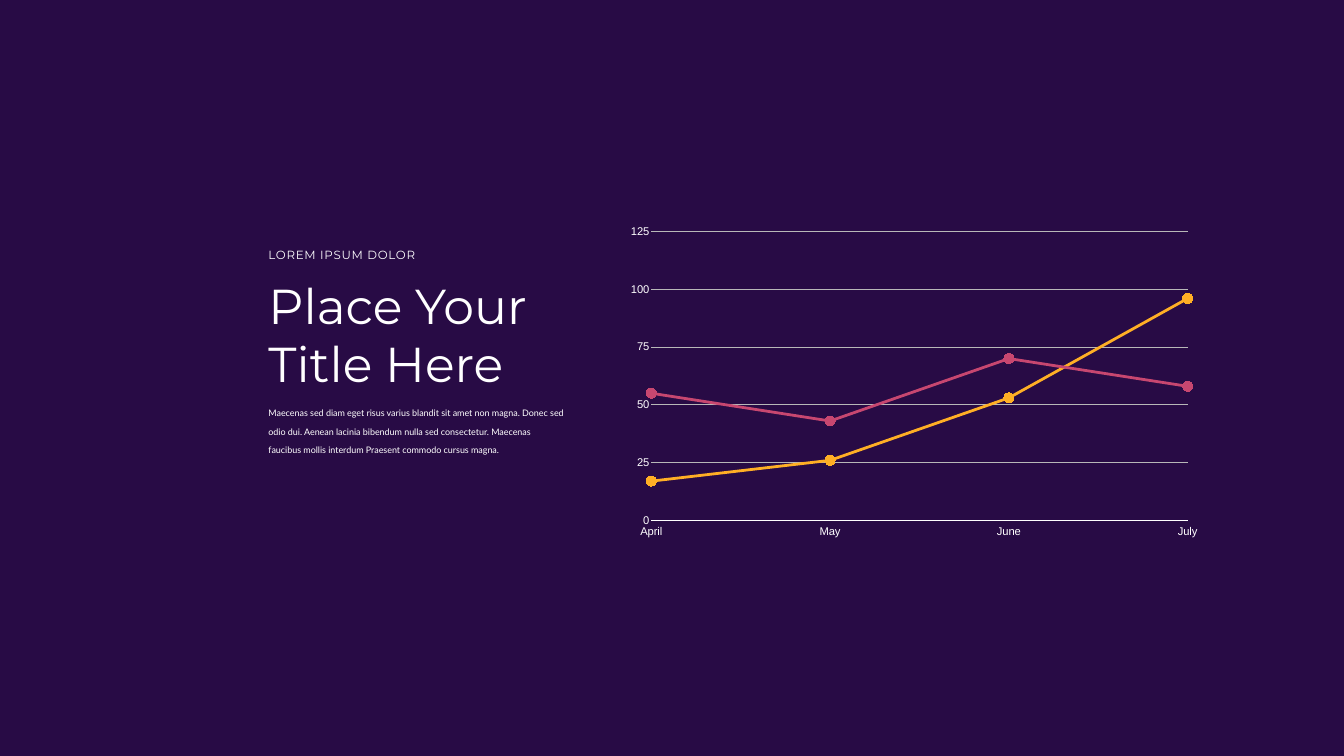
from lxml import etree
from pptx import Presentation
from pptx.chart.data import CategoryChartData
from pptx.dml.color import RGBColor
from pptx.enum.chart import XL_CHART_TYPE, XL_MARKER_STYLE, XL_TICK_LABEL_POSITION, XL_TICK_MARK
from pptx.enum.text import MSO_ANCHOR, MSO_AUTO_SIZE, PP_ALIGN
from pptx.oxml.ns import qn
from pptx.util import Pt

LINE_MARKERS = XL_CHART_TYPE.LINE_MARKERS
CIRCLE = XL_MARKER_STYLE.CIRCLE
LOW = XL_TICK_LABEL_POSITION.LOW
NO_TICK = XL_TICK_MARK.NONE
TOP, MIDDLE = MSO_ANCHOR.TOP, MSO_ANCHOR.MIDDLE
NO_FIT = MSO_AUTO_SIZE.NONE
LEFT = PP_ALIGN.LEFT
TITLE_ONLY = 5

COLORS = {"night": "280B45", "white": "FFFFFF", "grid": "B8B8B8",
          "amber": "FFAF25", "rose": "C74770"}

SLIDE_SIZE = (1920, 1080)
TEXT_LEFT = 379.5
INSET = 4

TITLE = {"text": "Place Your Title Here", "top": 386.5, "width": 508, "height": 181,
         "font": "Montserrat", "size": 70, "anchor": MIDDLE}
TEXTS = [
    {"text": "LOREM IPSUM DOLOR", "top": 349, "width": 472, "height": 29,
     "font": "Montserrat", "size": 16.9, "anchor": MIDDLE, "run": {"spc": "100"}},
    {"text": "Maecenas sed diam eget risus varius blandit sit amet non magna. "
             "Donec sed odio dui. Aenean lacinia bibendum nulla sed consectetur. "
             "Maecenas faucibus mollis interdum Praesent commodo cursus magna.",
     "top": 572.5, "width": 431, "height": 158, "font": "Lato", "size": 22,
     "anchor": TOP, "before": 45, "run": {"baseline": "14000"}},
]

CHART_BOX = (888.5, 313, 823, 461.5)
PLOT = {"x": 0.051, "y": 0.038, "w": 0.931, "h": 0.895}
MONTHS = ["April", "May", "June", "July"]
SERIES = [("Series 1", [17, 26, 53, 96], "amber"),
          ("Series 2", [55, 43, 70, 58], "rose")]


def color(name):
    return RGBColor.from_string(COLORS[name])


def paint_line(line, name, width):
    line.color.rgb = color(name)
    line.width = Pt(width)


def format_font(font, name, size):
    for key, value in {"name": name, "size": Pt(size), "bold": False}.items():
        setattr(font, key, value)
    font.color.rgb = color("white")


def write_text(box, item):
    place = {"left": TEXT_LEFT, "top": item["top"],
             "width": item["width"], "height": item["height"]}
    for key, value in place.items():
        setattr(box, key, Pt(value))
    frame = box.text_frame
    settings = {"word_wrap": True, "auto_size": NO_FIT, "vertical_anchor": item["anchor"]}
    settings.update({f"margin_{side}": Pt(INSET) for side in ("left", "top", "right", "bottom")})
    for key, value in settings.items():
        setattr(frame, key, value)
    para = frame.paragraphs[0]
    para.alignment = LEFT
    para.space_before = Pt(item.get("before", 0))
    span = para.add_run()
    span.text = item["text"]
    format_font(span.font, item["font"], item["size"])
    for key, value in item.get("run", {}).items():
        span.font._element.set(key, value)


def set_plot_layout(chart):
    area = chart._chartSpace.find(".//" + qn("c:plotArea"))
    for old in area.findall(qn("c:layout")):
        area.remove(old)
    layout = etree.Element(qn("c:layout"))
    manual = etree.SubElement(layout, qn("c:manualLayout"))
    values = {"layoutTarget": "inner", "xMode": "edge", "yMode": "edge", **PLOT}
    for key, value in values.items():
        etree.SubElement(manual, qn("c:" + key)).set("val", str(value))
    area.insert(0, layout)


def start_lines_on_axis(axis):
    for old in axis.findall(qn("c:crossBetween")):
        axis.remove(old)
    cross = etree.Element(qn("c:crossBetween"))
    cross.set("val", "midCat")
    axis.find(qn("c:crosses")).addnext(cross)


def add_line_chart(page):
    data = CategoryChartData()
    data.categories = MONTHS
    for name, values, _ in SERIES:
        data.add_series(name, values)
    chart = page.shapes.add_chart(LINE_MARKERS, *map(Pt, CHART_BOX), data).chart
    chart.has_title = chart.has_legend = False
    format_font(chart.font, "Montserrat", 10)
    plot = chart.plots[0]
    plot.vary_by_categories = False
    for series, (_, _, shade) in zip(plot.series, SERIES):
        series.smooth = False
        paint_line(series.format.line, shade, 4)
        marker = series.marker
        marker.style = CIRCLE
        marker.size = 14
        marker.format.fill.solid()
        marker.format.fill.fore_color.rgb = color(shade)
        marker.format.line.fill.background()

    months, amounts = chart.category_axis, chart.value_axis
    for axis in (months, amounts):
        axis.major_tick_mark = axis.minor_tick_mark = NO_TICK
        format_font(axis.tick_labels.font, "Arial", 16)
    months.tick_label_position = LOW
    paint_line(months.format.line, "white", 1)
    limits = {"minimum_scale": 0, "maximum_scale": 125, "major_unit": 25}
    for key, value in limits.items():
        setattr(amounts, key, value)
    amounts.format.line.fill.background()
    paint_line(amounts.major_gridlines.format.line, "grid", 1)
    set_plot_layout(chart)
    start_lines_on_axis(amounts._element)


def main():
    deck = Presentation()
    deck.slide_width, deck.slide_height = map(Pt, SLIDE_SIZE)
    page = deck.slides.add_slide(deck.slide_layouts[TITLE_ONLY])
    page.background.fill.solid()
    page.background.fill.fore_color.rgb = color("night")
    add_line_chart(page)
    write_text(page.shapes.title, TITLE)
    for item in TEXTS:
        write_text(page.shapes.add_textbox(0, 0, 0, 0), item)
    deck.save("out.pptx")


if __name__ == "__main__":
    main()
